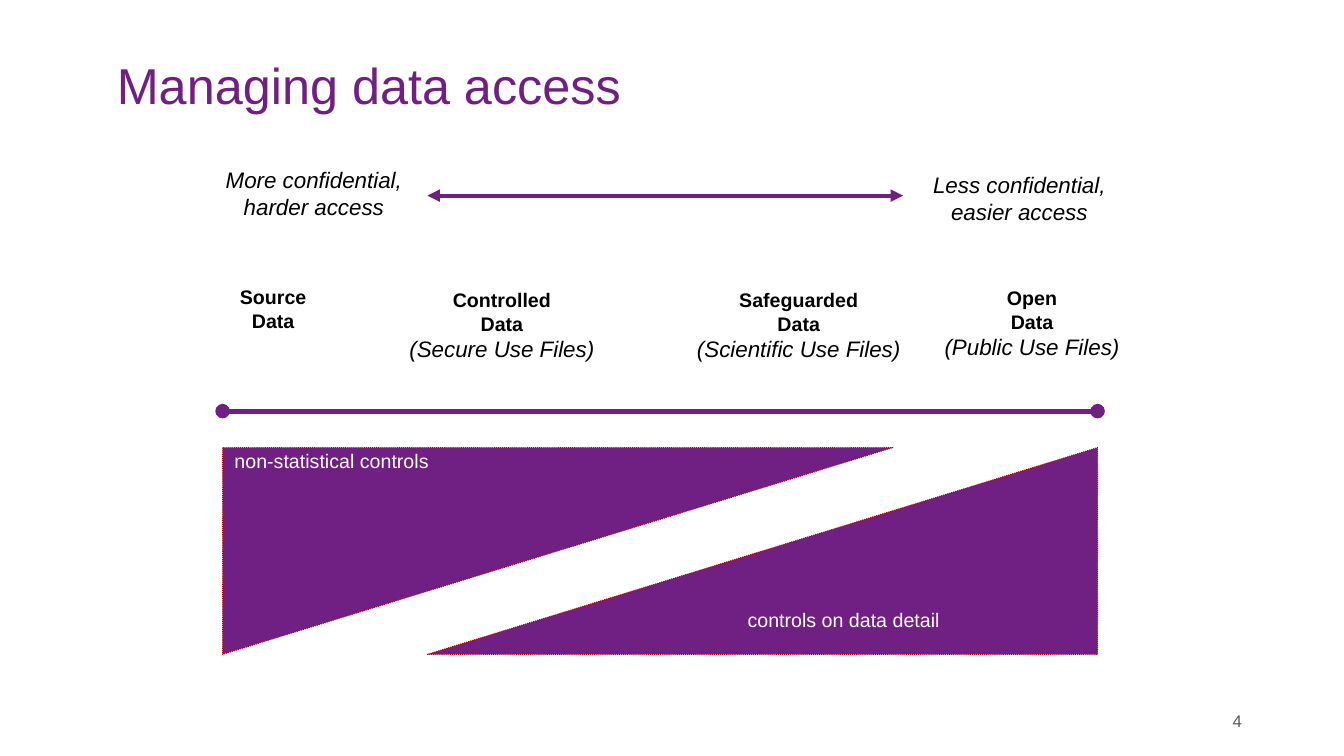
from lxml import etree
from pptx import Presentation
from pptx.dml.color import RGBColor
from pptx.enum.dml import MSO_LINE
from pptx.enum.shapes import MSO_CONNECTOR, MSO_SHAPE
from pptx.enum.text import MSO_ANCHOR, MSO_AUTO_SIZE, PP_ALIGN
from pptx.oxml.ns import qn
from pptx.util import Cm, Pt

PURPLE = RGBColor(0x70, 0x20, 0x82)
RED = RGBColor(0xC0, 0x00, 0x00)
BLACK = RGBColor(0x00, 0x00, 0x00)
WHITE = RGBColor(0xFF, 0xFF, 0xFF)
GREY = RGBColor(0x55, 0x5C, 0x58)

LEFT, CENTER, RIGHT = PP_ALIGN.LEFT, PP_ALIGN.CENTER, PP_ALIGN.RIGHT
TOP, MIDDLE = MSO_ANCHOR.TOP, MSO_ANCHOR.MIDDLE
STRAIGHT = MSO_CONNECTOR.STRAIGHT
WEDGE = MSO_SHAPE.RIGHT_TRIANGLE
DOTS = MSO_LINE.ROUND_DOT
NO_FIT = MSO_AUTO_SIZE.NONE

BOLD = {"size": Pt(14), "bold": True}
NOTE = {"size": Pt(16), "italic": True}
INSIDE = {"size": Pt(14), "color": WHITE}


def style(font, look):
    font.name = "Arial"
    font.color.rgb = look.get("color", BLACK)
    for key, value in look.items():
        if key != "color":
            setattr(font, key, value)


def add_text(slide, box, lines, align=CENTER, anchor=TOP, wrap=True):
    """Add a text box; lines holds one (text, look) pair per paragraph."""
    frame = slide.shapes.add_textbox(*map(Cm, box)).text_frame
    frame.word_wrap = wrap
    frame.vertical_anchor = anchor
    for i, (text, look) in enumerate(lines):
        para = frame.add_paragraph() if i else frame.paragraphs[0]
        para.text = text
        para.alignment = align
        style(para.font, look)


def add_line(slide, start, end, y, width, **ends):
    """Add a level line; ends maps headEnd and tailEnd to a marker type."""
    line = slide.shapes.add_connector(STRAIGHT, Cm(start), Cm(y), Cm(end), Cm(y))
    line.line.color.rgb = PURPLE
    line.line.width = Pt(width)
    props = line._element.spPr
    for tag, kind in ends.items():
        etree.SubElement(props.find(qn("a:ln")), qn("a:" + tag), type=kind)
    etree.SubElement(props, qn("a:effectLst"))


def add_title(slide, box, text):
    title = slide.shapes.title
    title.left, title.top, title.width, title.height = map(Cm, box)
    frame = title.text_frame
    frame.text = text
    frame.auto_size = NO_FIT
    frame.vertical_anchor = MIDDLE
    para = frame.paragraphs[0]
    para.alignment = LEFT
    para.line_spacing = 0.9
    style(para.font, {"size": Pt(36), "color": PURPLE})


def add_scale(slide, x, y, width):
    """Add the two end notes with a double arrow between them."""
    add_text(slide, (x, y, 5.72, 1.63),
             [("More confidential, harder access", NOTE)])
    add_text(slide, (x + width - 6.38, y + 0.13, 6.38, 1.63),
             [("Less confidential, easier access", NOTE)])
    for start, end in ((9.45, 17.71), (13.82, 5.72)):
        add_line(slide, x + start, x + end, y + 0.87, 3, tailEnd="triangle")


def add_types(slide, x, y, width):
    """Add the four data types above a line with round ends."""
    types = [
        (-0.07, 0, 2.69, "Source", None),
        (3.74, 0.08, 6.6, "Controlled", "(Secure Use Files)"),
        (11.28, 0.08, 6.48, "Safeguarded", "(Scientific Use Files)"),
        (17.76, 0.03, 5.28, "Open", "(Public Use Files)"),
    ]
    for dx, dy, wide, name, files in types:
        lines = [(name, BOLD), ("Data", BOLD)]
        if files:
            lines.append((files, NOTE))
        add_text(slide, (x + dx, y + dy, wide, 2.49), lines)
    add_line(slide, x, x + width, y + 3.3, 3.5, headEnd="oval", tailEnd="oval")


def add_wedges(slide, x, y, width, height):
    """Add two opposed triangles with their labels."""
    wide = 16.89
    for left, flip in ((x, "flipV"), (x + width - wide, "flipH")):
        wedge = slide.shapes.add_shape(
            WEDGE, Cm(left), Cm(y), Cm(wide), Cm(height))
        wedge._element.spPr.xfrm.set(flip, "1")
        wedge.shadow.inherit = False
        wedge.fill.solid()
        wedge.fill.fore_color.rgb = PURPLE
        wedge.line.color.rgb = RED
        wedge.line.width = Pt(0.75)
        wedge.line.dash_style = DOTS
    for dx, dy, text in ((0.05, -0.08, "non-statistical controls"),
                         (12.98, 3.91, "controls on data detail")):
        add_text(slide, (x + dx, y + dy, 6.8, 1.02), [(text, INSIDE)],
                 LEFT, wrap=False)


def main():
    deck = Presentation()
    deck.slide_width, deck.slide_height = Cm(33.87), Cm(19.05)
    slide = deck.slides.add_slide(deck.slide_layouts[5])
    add_title(slide, (2.69, 1.45, 27, 1.52), "Managing data access")
    add_scale(slide, 5.05, 4.06, 23.83)
    add_types(slide, 5.61, 7.06, 22.05)
    add_wedges(slide, 5.61, 11.28, 22.05, 5.21)
    add_text(slide, (23.93, 17.65, 7.62, 1.02),
             [("4", {"size": Pt(12), "color": GREY})], RIGHT, MIDDLE)
    deck.save("out.pptx")


if __name__ == "__main__":
    main()
